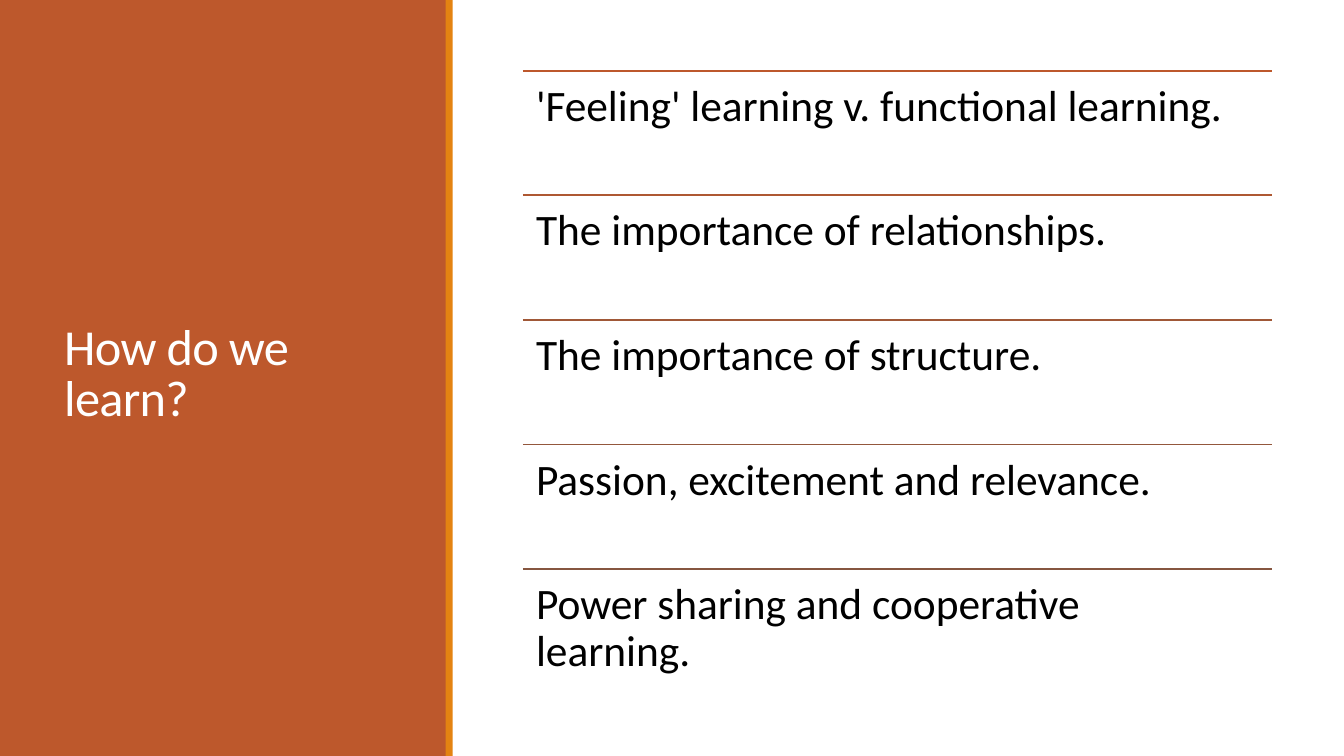
from dataclasses import dataclass
from lxml.etree import SubElement
from pptx import Presentation
from pptx.dml.color import RGBColor
from pptx.enum.shapes import MSO_CONNECTOR, MSO_SHAPE
from pptx.enum.text import MSO_ANCHOR
from pptx.oxml.ns import qn
from pptx.util import Cm, Pt


@dataclass(frozen=True)
class Theme:
    font: str = "Calibri"
    rust: str = "BD582C"
    amber: str = "E48312"
    white: str = "FFFFFF"
    black: str = "000000"
    rules: tuple = ("BD582C", "AE5832", "A05837", "93573C", "865640")
    title: float = 36
    body: float = 31
    rule: float = 1.25


THEME = Theme()
WIDE, HIGH = 33.87, 19.05
TITLE = "How do we learn?"
POINTS = (
    "'Feeling' learning v. functional learning.",
    "The importance of relationships.",
    "The importance of structure.",
    "Passion, excitement and relevance.",
    "Power sharing and cooperative learning.",
)


def apply(item, form):
    for name, value in form.items():
        setattr(item, name, value)


def add_block(slide, box, color):
    block = slide.shapes.add_shape(MSO_SHAPE.RECTANGLE, *map(Cm, box))
    block.shadow.inherit = False
    block.fill.solid()
    block.fill.fore_color.rgb = RGBColor.from_string(color)
    block.line.fill.background()


def add_text(slide, box, words, size, color, lead, frame):
    text = slide.shapes.add_textbox(*map(Cm, box)).text_frame
    apply(text, {"word_wrap": True, **frame})
    para = text.paragraphs[0]
    para.line_spacing = lead
    run = para.add_run()
    run.text = words
    apply(run.font, {"name": THEME.font, "size": Pt(size)})
    run.font.color.rgb = RGBColor.from_string(color)
    return run


def add_rule(slide, left, top, width, color):
    rule = slide.shapes.add_connector(
        MSO_CONNECTOR.STRAIGHT, Cm(left), Cm(top), Cm(left + width), Cm(top))
    rule.line.color.rgb = RGBColor.from_string(color)
    rule.line.width = Pt(THEME.rule)
    SubElement(rule.element.spPr, qn("a:effectLst"))


# Left panel: coloured field, title and edge stripe
def add_panel(slide, box):
    left, top, width, height = box
    add_block(slide, box, THEME.rust)
    run = add_text(
        slide, (left + 1.37, top + 1.45, width - 2.69, height - 3.02),
        TITLE, THEME.title, THEME.white, 0.85,
        {"vertical_anchor": MSO_ANCHOR.MIDDLE})
    run.font._element.set("spc", "-50")
    add_block(slide, (left + width - 0.02, top, 0.18, height), THEME.amber)


# Right side: equal rows, each under its own rule
def add_list(slide, box):
    left, top, width, height = box
    step = height / len(POINTS)
    inset = {"margin_left": Cm(0.33), "margin_top": Cm(0.33),
             "margin_right": Cm(1), "margin_bottom": Cm(0.33)}
    for row, (words, color) in enumerate(zip(POINTS, THEME.rules)):
        y = top + row * step
        add_rule(slide, left, y, width, color)
        add_text(slide, (left, y, width, step), words,
                 THEME.body, THEME.black, 0.9, inset)


def main():
    deck = Presentation()
    apply(deck, {"slide_width": Cm(WIDE), "slide_height": Cm(HIGH)})
    slide = deck.slides.add_slide(deck.slide_layouts[6])
    add_panel(slide, (0, 0, 11.25, HIGH))
    add_list(slide, (13.18, 1.78, 18.87, 15.7))
    deck.save("out.pptx")


if __name__ == "__main__":
    main()
